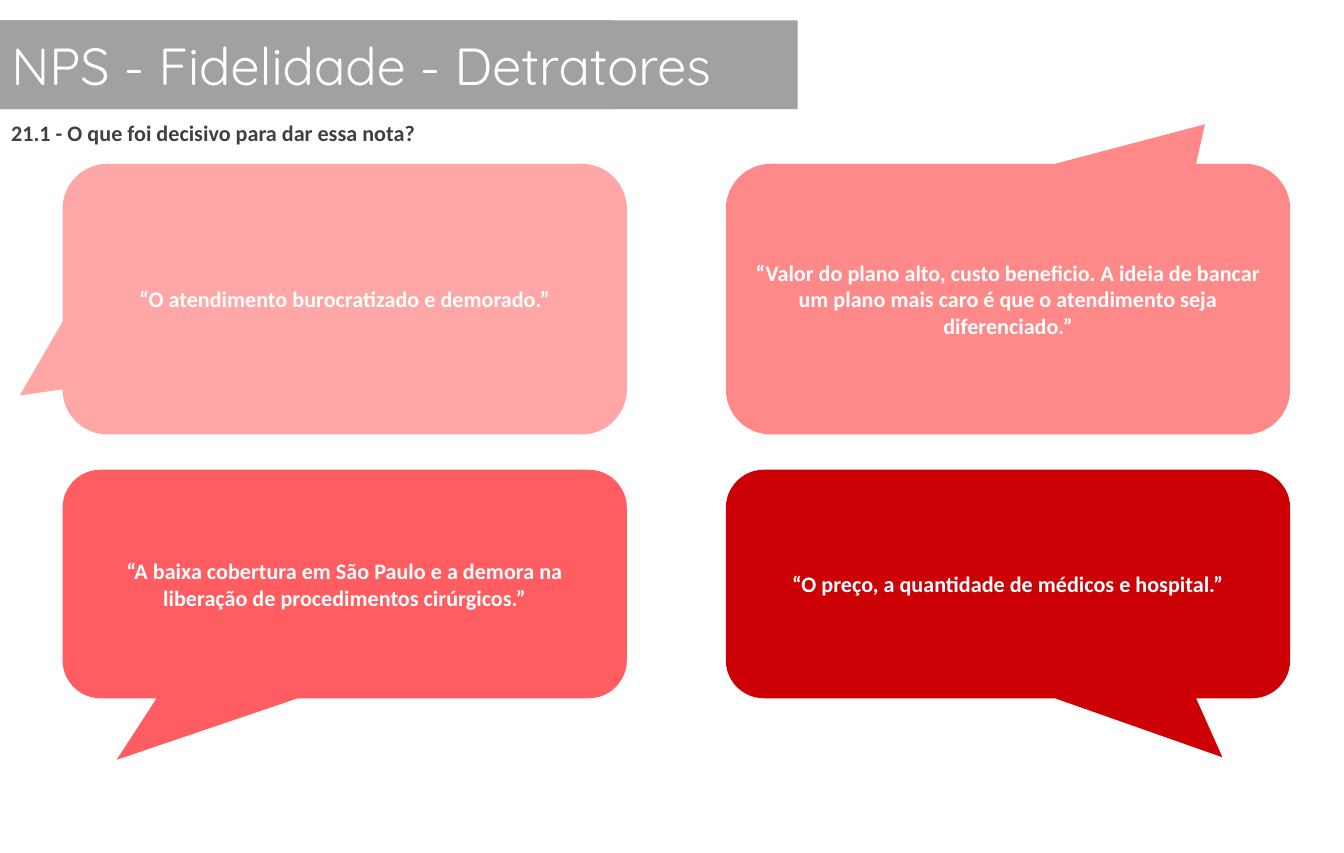
from copy import deepcopy
from dataclasses import dataclass

from pptx import Presentation
from pptx.dml.color import RGBColor
from pptx.enum.shapes import MSO_SHAPE
from pptx.enum.text import MSO_ANCHOR, MSO_AUTO_SIZE, PP_ALIGN
from pptx.oxml.ns import qn
from pptx.util import Inches, Pt


@dataclass(frozen=True)
class Theme:
    """Colours, fonts and type sizes of the slide."""
    band: str = "A1A1A1"
    light: str = "FFFFFF"
    dark: str = "404040"
    reds: tuple = ("FFA7A7", "FF8989", "FF5D61", "CC0005")
    title_font: str = "Quicksand"
    body_font: str = "Calibri"
    title_size: int = 33
    body_size: int = 14


THEME = Theme()

QUOTES = (
    ("“O atendimento burocratizado e demorado.”", (-0.576, 0.356)),
    ("“Valor do plano alto, custo beneficio. A ideia de bancar um plano mais "
     "caro é que o atendimento seja diferenciado.”", (0.349, -0.646)),
    ("“A baixa cobertura em São Paulo e a demora na liberação de "
     "procedimentos cirúrgicos.”", (-0.404, 0.769)),
    ("“O preço, a quantidade de médicos e hospital.”", (0.38, 0.758)),
)


def write(tf, text, font, size, color, align, bold=False):
    """Write one formatted, wrapped paragraph into a text frame."""
    tf.word_wrap = True
    tf.auto_size = MSO_AUTO_SIZE.NONE
    p = tf.paragraphs[0]
    p.text = text
    p.alignment = align
    p.font.name = font
    p.font.size = Pt(size)
    p.font.bold = bold
    p.font.color.rgb = RGBColor.from_string(color)


def paint(sp, color):
    """Give a shape a solid fill and no outline."""
    sp.fill.solid()
    sp.fill.fore_color.rgb = RGBColor.from_string(color)
    sp.line.fill.background()


def add_filled(s, kind, x, y, w, h, color):
    """Add a flat preset shape without outline."""
    sp = s.shapes.add_shape(kind, Inches(x), Inches(y), Inches(w), Inches(h))
    sp.shadow.inherit = False
    paint(sp, color)
    return sp


def add_title(s, text, x, y, w, h):
    """Place the rounded title over a band that bleeds off the left edge."""
    bleed, band_w = 0.24, 5.75
    band = add_filled(s, MSO_SHAPE.ROUNDED_RECTANGLE,
                      x - bleed, y, band_w, h, THEME.band)
    title = s.shapes.title
    title.left, title.top = Inches(x), Inches(y)
    title.width, title.height = Inches(w), Inches(h)
    outline = band._element.spPr.find(qn("a:prstGeom"))
    title._element.spPr.insert(1, deepcopy(outline))
    paint(title, THEME.band)
    band._element.addnext(title._element)
    tf = title.text_frame
    tf.margin_left = Inches(0.1)
    tf.vertical_anchor = MSO_ANCHOR.MIDDLE
    write(tf, text, THEME.title_font, THEME.title_size, THEME.light, PP_ALIGN.LEFT)


def add_question(s, text, x, y, w, h):
    """Place the survey question under the title."""
    sp = s.shapes.add_textbox(Inches(x), Inches(y), Inches(w), Inches(h))
    write(sp.text_frame, text, THEME.body_font, THEME.body_size, THEME.dark,
          PP_ALIGN.JUSTIFY, bold=True)


def add_quotes(s, quotes, x, y, w, h):
    """Fill the box with a two-by-two grid of speech bubbles."""
    col_gap, row_gap, top_h = 0.87, 0.31, 2.38
    bubble_w = (w - col_gap) / 2
    heights = (top_h, h - top_h - row_gap)
    for i, ((text, tail), color) in enumerate(zip(quotes, THEME.reds)):
        row, col = divmod(i, 2)
        sp = add_filled(s, MSO_SHAPE.ROUNDED_RECTANGULAR_CALLOUT,
                        x + col * (bubble_w + col_gap),
                        y + row * (top_h + row_gap),
                        bubble_w, heights[row], color)
        sp.adjustments[0], sp.adjustments[1] = tail
        tf = sp.text_frame
        tf.vertical_anchor = MSO_ANCHOR.MIDDLE
        write(tf, text, THEME.body_font, THEME.body_size, THEME.light,
              PP_ALIGN.CENTER, bold=True)


def main():
    """Build the detractors slide and save it."""
    prs = Presentation()
    prs.slide_width, prs.slide_height = Inches(189 / 16), Inches(7.5)
    s = prs.slides.add_slide(prs.slide_layouts[5])
    add_title(s, "NPS - Fidelidade - Detratores", 0, 0.18, 7.01, 0.78)
    add_question(s, "21.1 - O que foi decisivo para dar essa nota?",
                 0, 1, 10.17, 0.34)
    add_quotes(s, QUOTES, 0.55, 1.44, 10.79, 4.7)
    prs.save("out.pptx")


if __name__ == "__main__":
    main()
